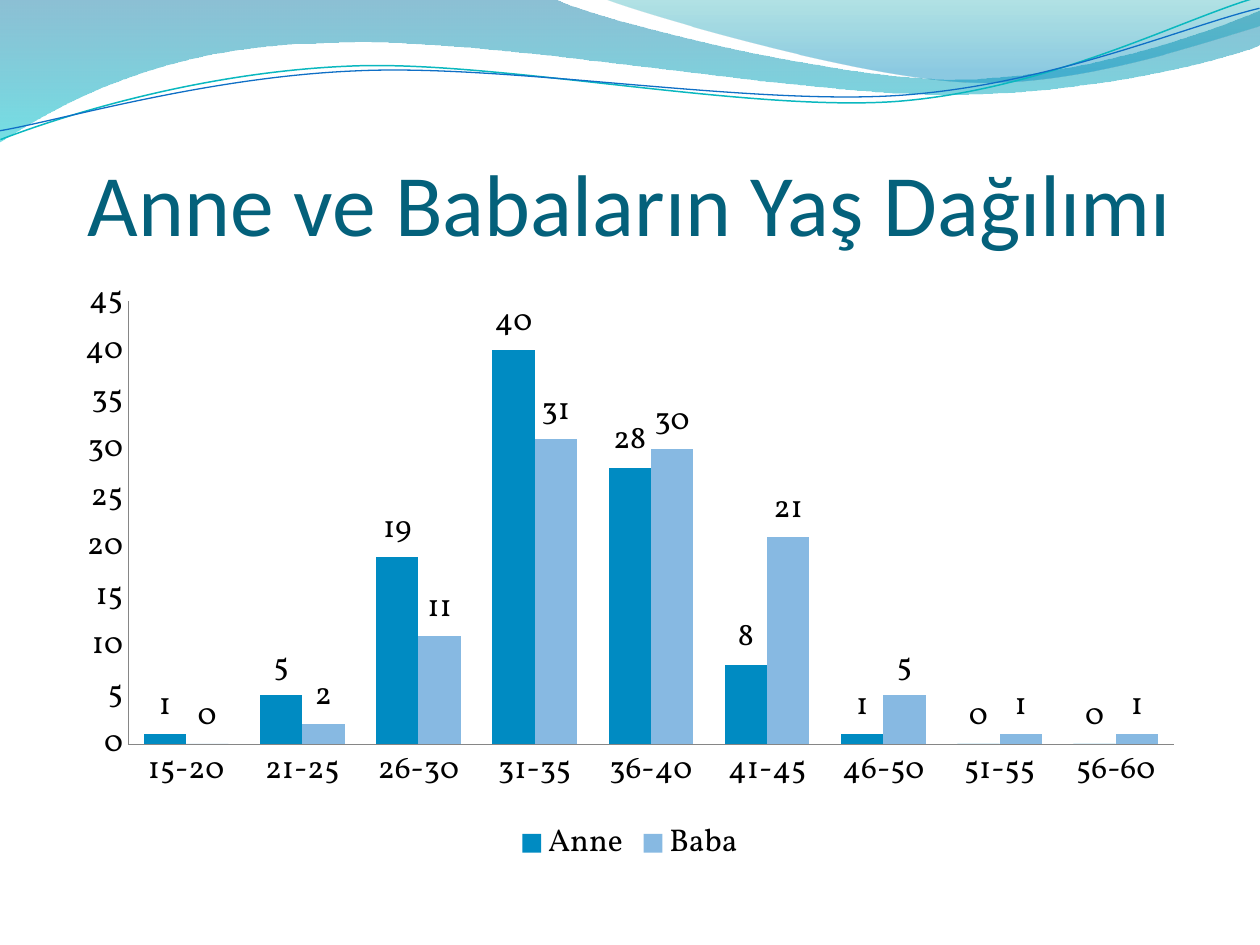
from lxml import etree
from pptx import Presentation
from pptx.chart.data import CategoryChartData
from pptx.dml.color import RGBColor
from pptx.enum.chart import XL_CHART_TYPE, XL_LABEL_POSITION, XL_LEGEND_POSITION, XL_TICK_MARK
from pptx.enum.text import MSO_ANCHOR, PP_ALIGN
from pptx.oxml import parse_xml
from pptx.oxml.ns import nsdecls, qn
from pptx.util import Pt

COLUMN = XL_CHART_TYPE.COLUMN_CLUSTERED
ABOVE = XL_LABEL_POSITION.OUTSIDE_END
BELOW = XL_LEGEND_POSITION.BOTTOM
NO_TICK = XL_TICK_MARK.NONE
LOW = MSO_ANCHOR.BOTTOM
CENTER = PP_ALIGN.CENTER

SCALE = 914400 / 126  # EMU in one px
TILT = -2.7  # degrees, for both thin curves

COLORS = {
    "title": "04617B", "text": "000000", "axis": "868686",
    "Anne": "008BC2", "Baba": "87B9E2",
    "deep": "0074A1", "aqua": "00C6CF", "teal": "00A1A9", "sky": "008BBF",
    "green": "0AB8BF", "blue": "0F6FC6",
}

# Outlines in px: two numbers are a point, six are a Bézier curve.
BAND = [(0, 0), (554, -1), (600, 21, 837, 79, 955, 79),
        (1075, 79, 1207, 33, 1260, 11), (1261, 45),
        (1239, 55, 1096, 96, 940, 94), (784, 94, 481, 35, 324, 43),
        (163, 45, 58, 105, -1, 142), (0, 0)]
CREST = [(604, -1), (641, 14, 859, 78, 969, 82),
         (1079, 87, 1211, 40, 1260, 26), (1260, 0), (604, -1)]
UPPER = [(-2, 110), (58, 90, 199, 52, 350, 53),
         (494, 53, 745, 118, 896, 114), (1049, 109, 1184, 45, 1260, 27)]
LOWER = [(-2, 101), (57, 94, 207, 57, 357, 58),
         (509, 58, 750, 112, 902, 108), (1052, 104, 1188, 52, 1262, 38)]

AGES = ["15-20", "21-25", "26-30", "31-35", "36-40",
        "41-45", "46-50", "51-55", "56-60"]
COUNTS = {
    "Anne": [1, 5, 19, 40, 28, 8, 1, 0, 0],
    "Baba": [0, 2, 11, 31, 30, 21, 5, 1, 1],
}


def px(*sizes):
    return [round(size * SCALE) for size in sizes]


def rgb(name):
    return RGBColor.from_string(COLORS[name])


def apply(item, values):
    for key, value in values.items():
        setattr(item, key, value)


class Deck:
    def __init__(self, wide, high):
        self.show = Presentation()
        self.show.slide_width, self.show.slide_height = px(wide, high)
        self.slide = self.show.slides.add_slide(self.show.slide_layouts[6])

    def outline(self, parts, close):
        """Build a freeform, then join the lines of each curve into a Bézier."""
        start, *rest = parts
        dots = [part[i:i + 2] for part in rest for i in range(0, len(part), 2)]
        maker = self.slide.shapes.build_freeform(*start, scale=SCALE)
        maker.add_line_segments(dots, close=close)
        shape = maker.convert_to_shape()
        shape.shadow.inherit = False

        lines = list(shape.element.iter(qn("a:lnTo")))
        for part in rest:
            count = len(part) // 2
            group, lines = lines[:count], lines[count:]
            if count == 3:
                bend = etree.Element(qn("a:cubicBezTo"))
                group[0].addprevious(bend)
                for line in group:
                    bend.append(line[0])
                    line.getparent().remove(line)
        return shape

    def wave(self, parts, stops):
        """Draw a filled wave; each stop is place, colour and opacity in %."""
        shape = self.outline(parts, True)
        shape.line.fill.background()
        shape.fill.gradient()
        shape.fill.gradient_angle = 270
        marks = shape.fill.gradient_stops
        for mark, (place, color, _) in zip(marks, stops):
            mark.position = place
            mark.color.rgb = rgb(color)
        tints = shape.element.spPr.iter(qn("a:srgbClr"))
        for tint, stop in zip(tints, stops):
            alpha = etree.SubElement(tint, qn("a:alpha"))
            alpha.set("val", str(stop[2] * 1000))

    def curve(self, parts, color, width):
        shape = self.outline(parts, False)
        shape.rotation = TILT
        shape.fill.background()
        shape.line.color.rgb = rgb(color)
        shape.line.width = Pt(width)

    def title(self, text, box):
        frame = self.slide.shapes.add_textbox(*px(*box)).text_frame
        apply(frame, {"word_wrap": True, "vertical_anchor": LOW,
                      "margin_left": 0, "margin_right": 0, "margin_bottom": 0})
        line = frame.paragraphs[0]
        apply(line, {"text": text, "alignment": CENTER})
        font = line.runs[0].font
        apply(font, {"name": "Calibri", "size": Pt(50)})
        font.color.rgb = rgb("title")

    def chart(self, ages, counts, box, inner):
        data = CategoryChartData()
        data.categories = ages
        for name, values in counts.items():
            data.add_series(name, values)
        chart = self.slide.shapes.add_chart(COLUMN, *px(*box), data).chart
        apply(chart, {"has_title": False, "has_legend": True})
        apply(chart.font, {"name": "Vollkorn", "size": Pt(18)})
        chart.font.color.rgb = rgb("text")
        apply(chart.legend, {"position": BELOW, "include_in_layout": False})

        apply(chart.value_axis, {"minimum_scale": 0, "maximum_scale": 45,
                                 "major_unit": 5})
        for axis in (chart.category_axis, chart.value_axis):
            apply(axis, {"has_major_gridlines": False,
                         "major_tick_mark": NO_TICK, "minor_tick_mark": NO_TICK})
            axis.format.line.color.rgb = rgb("axis")
            axis.format.line.width = Pt(0.25)

        plot = chart.plots[0]
        apply(plot, {"gap_width": 75, "overlap": 0, "vary_by_categories": False})
        for series in plot.series:
            series.format.fill.solid()
            series.format.fill.fore_color.rgb = rgb(series.name)
            apply(series.data_labels, {"show_value": True, "position": ABOVE})
        self.place(chart, box, inner)

    def place(self, chart, box, inner):
        """Fix the plot's inner area, given in px on the slide."""
        left, top, wide, high = box
        x, y, w, h = inner
        parts = {"x": (x - left) / wide, "y": (y - top) / high,
                 "w": w / wide, "h": h / high}
        modes = "".join(f'<c:{key}Mode val="edge"/>' for key in "xy")
        spots = "".join(f'<c:{key} val="{part:.4f}"/>'
                        for key, part in parts.items())
        area = chart.element.find(".//" + qn("c:plotArea"))
        for old in area.findall(qn("c:layout")):
            area.remove(old)
        area.insert(0, parse_xml(
            f'<c:layout {nsdecls("c")}><c:manualLayout>'
            f'<c:layoutTarget val="inner"/>{modes}{spots}'
            '</c:manualLayout></c:layout>'))


def main():
    deck = Deck(1260, 945)
    deck.wave(BAND, [(0, "deep", 45), (1, "aqua", 55)])
    deck.wave(CREST, [(0, "teal", 30), (0.8, "sky", 45)])
    deck.curve(UPPER, "green", 0.85)
    deck.curve(LOWER, "blue", 0.75)
    deck.title("Anne ve Babaların Yaş Dağılımı", (63, 97, 1134, 157))
    deck.chart(AGES, COUNTS, (63, 267, 1134, 605), (128, 301, 1046, 443))
    deck.show.save("out.pptx")


if __name__ == "__main__":
    main()
